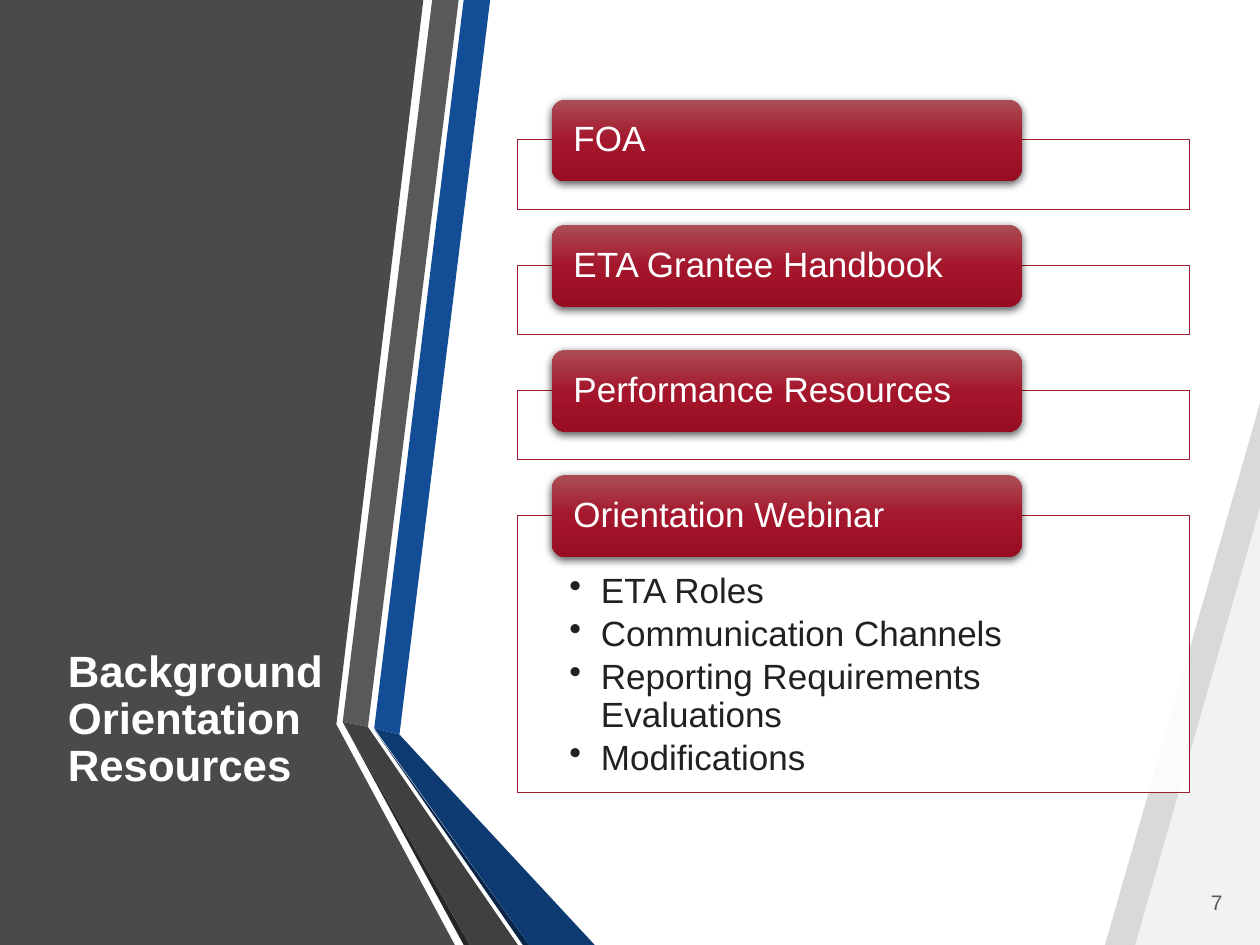
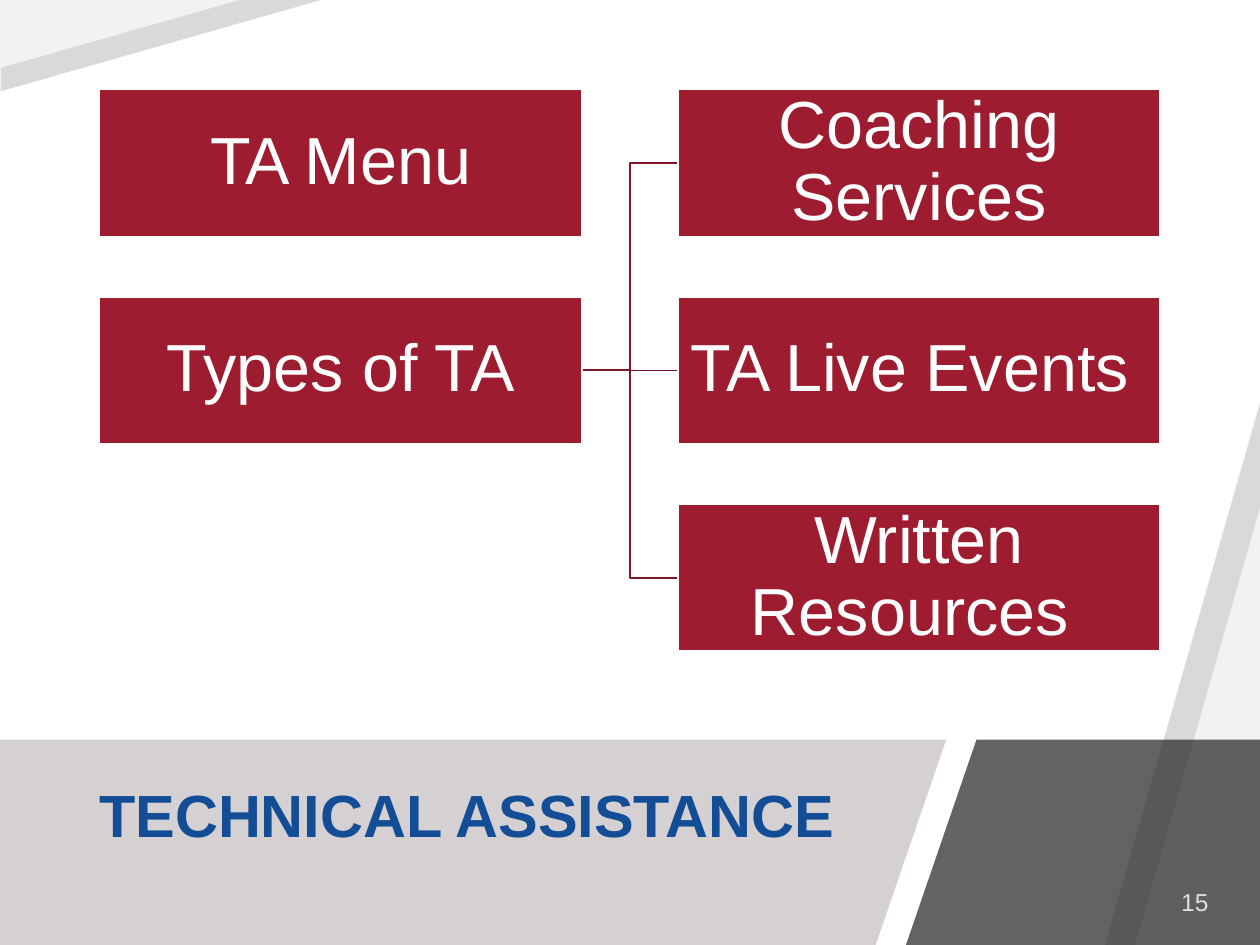
from dataclasses import dataclass

from lxml.etree import SubElement
from pptx import Presentation
from pptx.dml.color import RGBColor
from pptx.enum.shapes import MSO_CONNECTOR, MSO_SHAPE
from pptx.enum.text import MSO_ANCHOR, PP_ALIGN
from pptx.oxml import parse_xml
from pptx.oxml.ns import nsdecls, qn
from pptx.util import Inches, Pt


@dataclass(frozen=True)
class Theme:
    font: str = "Arial"
    white: str = "FFFFFF"
    ink: str = "242021"
    blue: str = "124D95"
    navy: str = "0D3A70"
    deep_navy: str = "09264A"
    red: str = "9E1C30"
    dark_red: str = "7F1626"
    charcoal: str = "4C494A"
    gray: str = "595959"
    dark_gray: str = "404040"
    black_gray: str = "262626"
    taupe: str = "978A8D"
    silver: str = "D9D9D9"
    mist: str = "F2F2F2"
    cap_stops: tuple = ((0, "AB4E55"), (50, "A4162C"), (100, "980D23"))
    side_title: int = 25
    band_title: int = 34
    list_text: int = 20
    tile_text: int = 38


THEME = Theme()

# Content
RESOURCES_TITLE = "Background Orientation Resources"
RESOURCES = [
    ("FOA", []),
    ("ETA Grantee Handbook", []),
    ("Performance Resources", []),
    ("Orientation Webinar", [
        "ETA Roles",
        "Communication Channels",
        "Reporting Requirements Evaluations",
        "Modifications",
    ]),
]
ASSISTANCE_TITLE = "TECHNICAL ASSISTANCE"
ASSISTANCE_ROOTS = ["TA Menu", "Types of TA"]
ASSISTANCE_TYPES = ["Coaching Services", "TA Live Events ", "Written Resources "]

# Backdrop: (left, top, width, height, fill, apex position, rotation)
RIGHT_CORNER = [
    (8.77, 3.2, 1.23, 4.3, THEME.silver, 1, 0),
    (9.01, 4.03, 0.99, 3.47, THEME.mist, 1, 0),
]
TOP_CORNER = [
    (0.92, -0.92, 0.73, 2.56, THEME.silver, 0, 90),
    (0.68, -0.68, 0.54, 1.9, THEME.mist, 0, 90),
]

# Outlines: (fill, opacity in percent, points)
SIDE_PANEL = [
    (THEME.charcoal, 100, [(2.64, 0), (3.36, 0), (2.67, 5.75), (3.61, 7.5), (0, 7.5), (0, 0)]),
    (THEME.blue, 100, [(2.97, 5.78), (3.17, 5.83), (3.89, 0), (3.68, 0)]),
    (THEME.gray, 100, [(3.64, 0), (3.43, 0), (2.72, 5.73), (2.92, 5.77)]),
    (THEME.black_gray, 100, [(2.72, 5.73), (3.68, 7.5), (3.73, 7.5)]),
    (THEME.deep_navy, 100, [(2.97, 5.79), (4.15, 7.5), (4.2, 7.5)]),
    (THEME.navy, 100, [(2.97, 5.78), (4.2, 7.5), (4.72, 7.5), (3.17, 5.83)]),
    (THEME.dark_gray, 100, [(2.72, 5.73), (3.73, 7.5), (4.11, 7.5), (2.92, 5.77)]),
]
TITLE_BAND = (THEME.taupe, 40, [(0, 5.87), (7.51, 5.87), (6.95, 7.5), (0, 7.5)])
NUMBER_BAND = (THEME.ink, 70, [(7.75, 5.87), (10, 5.87), (10, 7.5), (7.19, 7.5)])


def set_opacity(fill_parent, percent):
    """Make the solid colour under the given element translucent."""
    if percent < 100:
        color = fill_parent.find(qn("a:solidFill"))[0]
        SubElement(color, qn("a:alpha")).set("val", str(percent * 1000))


def paint(shape, fill, opacity=100, line=None, width=1):
    shape.shadow.inherit = False
    shape.fill.solid()
    shape.fill.fore_color.rgb = RGBColor.from_string(fill)
    set_opacity(shape._element.spPr, opacity)
    if line:
        shape.line.color.rgb = RGBColor.from_string(line)
        shape.line.width = Pt(width)
    else:
        shape.line.fill.background()


def add_box(page, kind, left, top, width, height):
    return page.shapes.add_shape(kind, *map(Inches, (left, top, width, height)))


def add_triangles(page, triangles):
    for left, top, width, height, fill, apex, rotation in triangles:
        triangle = add_box(page, MSO_SHAPE.ISOSCELES_TRIANGLE, left, top, width, height)
        triangle.adjustments[0] = apex
        triangle.rotation = rotation
        paint(triangle, fill)


def add_outline(page, fill, opacity, points):
    first, *rest = [(Inches(x), Inches(y)) for x, y in points]
    builder = page.shapes.build_freeform(*first)
    builder.add_line_segments(rest, close=True)
    paint(builder.convert_to_shape(), fill, opacity)


def write(box, lines, size, color, anchor=MSO_ANCHOR.MIDDLE, align=PP_ALIGN.LEFT,
          insets=(0.1, 0.05, 0.1, 0.05), bold=False, bulleted=False, opacity=100,
          spacing=0.9):
    frame = box.text_frame
    frame.word_wrap = True
    frame.vertical_anchor = anchor
    for side, inset in zip(("left", "top", "right", "bottom"), insets):
        setattr(frame, f"margin_{side}", Inches(inset))
    for index, text in enumerate(lines):
        para = frame.add_paragraph() if index else frame.paragraphs[0]
        if bulleted:
            properties = para._p.get_or_add_pPr()
            properties.set("marL", str(Inches(0.25)))
            properties.set("indent", str(-Inches(0.25)))
            SubElement(properties, qn("a:buChar")).set("char", "•")
            para.space_after = Pt(3)
        para.alignment = align
        para.line_spacing = spacing
        span = para.add_run()
        span.text = text
        for name, value in {"name": THEME.font, "size": Pt(size), "bold": bold}.items():
            setattr(span.font, name, value)
        span.font.color.rgb = RGBColor.from_string(color)
        set_opacity(span._r.rPr, opacity)


def add_text(page, place, text, size, color, **format_values):
    box = page.shapes.add_textbox(*map(Inches, place))
    write(box, [text], size, color, **format_values)


def add_title(page, place, text, size, color):
    add_text(page, place, text, size, color, anchor=MSO_ANCHOR.BOTTOM, bold=True)


def add_page_number(page, place, number, size, color, opacity=100):
    add_text(page, place, str(number), size, color, align=PP_ALIGN.RIGHT,
             opacity=opacity, spacing=1.0)


def add_cap(page, left, top, text):
    """Glossy rounded label with a soft shadow below it."""
    cap = add_box(page, MSO_SHAPE.ROUNDED_RECTANGLE, left, top, 3.73, 0.65)
    paint(cap, THEME.red)
    stops = "".join(f'<a:gs pos="{place * 1000}"><a:srgbClr val="{color}"/></a:gs>'
                    for place, color in THEME.cap_stops)
    properties = cap._element.spPr
    properties.replace(properties.find(qn("a:solidFill")), parse_xml(
        f'<a:gradFill {nsdecls("a")} rotWithShape="1"><a:gsLst>{stops}</a:gsLst>'
        '<a:lin ang="5400000" scaled="0"/></a:gradFill>'))
    properties.find(qn("a:effectLst")).append(parse_xml(
        f'<a:outerShdw {nsdecls("a")} blurRad="{Pt(4.5)}" dist="{Pt(1.5)}" dir="5400000" '
        'algn="ctr" rotWithShape="0"><a:srgbClr val="000000"><a:alpha val="63000"/>'
        '</a:srgbClr></a:outerShdw>'))
    write(cap, [text], THEME.list_text, THEME.white, insets=(0.14, 0, 0.14, 0))


def add_link(page, start, end):
    kind = MSO_CONNECTOR.STRAIGHT if start[1] == end[1] else MSO_CONNECTOR.ELBOW
    link = page.shapes.add_connector(kind, *map(Inches, start + end))
    link.line.color.rgb = RGBColor.from_string(THEME.dark_red)
    link.line.width = Pt(1)
    SubElement(link._element.spPr, qn("a:effectLst"))


def build_resources(page):
    add_triangles(page, RIGHT_CORNER)
    for outline in SIDE_PANEL:
        add_outline(page, *outline)
    add_title(page, (0.44, 0.75, 2.28, 5.58), RESOURCES_TITLE, THEME.side_title, THEME.white)

    # Panels, each with its label over the top edge
    left, first_top, last_top = 4.11, 1.11, 4.09
    pitch = (last_top - first_top) / (len(RESOURCES) - 1)
    for row, (label, items) in enumerate(RESOURCES):
        top = first_top + row * pitch
        panel = add_box(page, MSO_SHAPE.RECTANGLE, left, top, 5.33, 2.2 if items else 0.55)
        paint(panel, THEME.white, 90, THEME.red, 0.5)
        if items:
            write(panel, items, THEME.list_text, THEME.ink, anchor=MSO_ANCHOR.TOP,
                  insets=(0.41, 0.46, 0.41, 0.16), bulleted=True)
        add_cap(page, left + 0.27, top - 0.32, label)
    add_page_number(page, (8.68, 6.96, 1.12, 0.4), 7, 12, THEME.gray)


def build_assistance(page):
    add_triangles(page, RIGHT_CORNER + TOP_CORNER)
    add_outline(page, *TITLE_BAND)
    add_title(page, (0.69, 5.6, 6.33, 1.2), ASSISTANCE_TITLE, THEME.band_title, THEME.blue)
    add_outline(page, *NUMBER_BAND)
    add_page_number(page, (8.59, 6.93, 1.1, 0.45), 15, 14, THEME.white, 80)

    # Tree: the last root branches to every type
    width, height = 3.83, 1.17
    columns = [(0.79, ASSISTANCE_ROOTS), (5.38, ASSISTANCE_TYPES)]
    tops = [0.71 + row * 1.645 for row in range(len(ASSISTANCE_TYPES))]
    middles = [top + height / 2 for top in tops]
    fork = (columns[0][0] + width, middles[len(ASSISTANCE_ROOTS) - 1])
    for middle in middles:
        add_link(page, fork, (columns[1][0], middle))
    for left, labels in columns:
        for top, label in zip(tops, labels):
            tile = add_box(page, MSO_SHAPE.RECTANGLE, left, top, width, height)
            paint(tile, THEME.red, line=THEME.white)
            write(tile, [label], THEME.tile_text, THEME.white,
                  align=PP_ALIGN.CENTER, insets=(0.03,) * 4)


def main():
    deck = Presentation()
    deck.slide_width, deck.slide_height = Inches(10), Inches(7.5)
    for build in (build_resources, build_assistance):
        build(deck.slides.add_slide(deck.slide_layouts[6]))
    deck.save("out.pptx")


if __name__ == "__main__":
    main()
